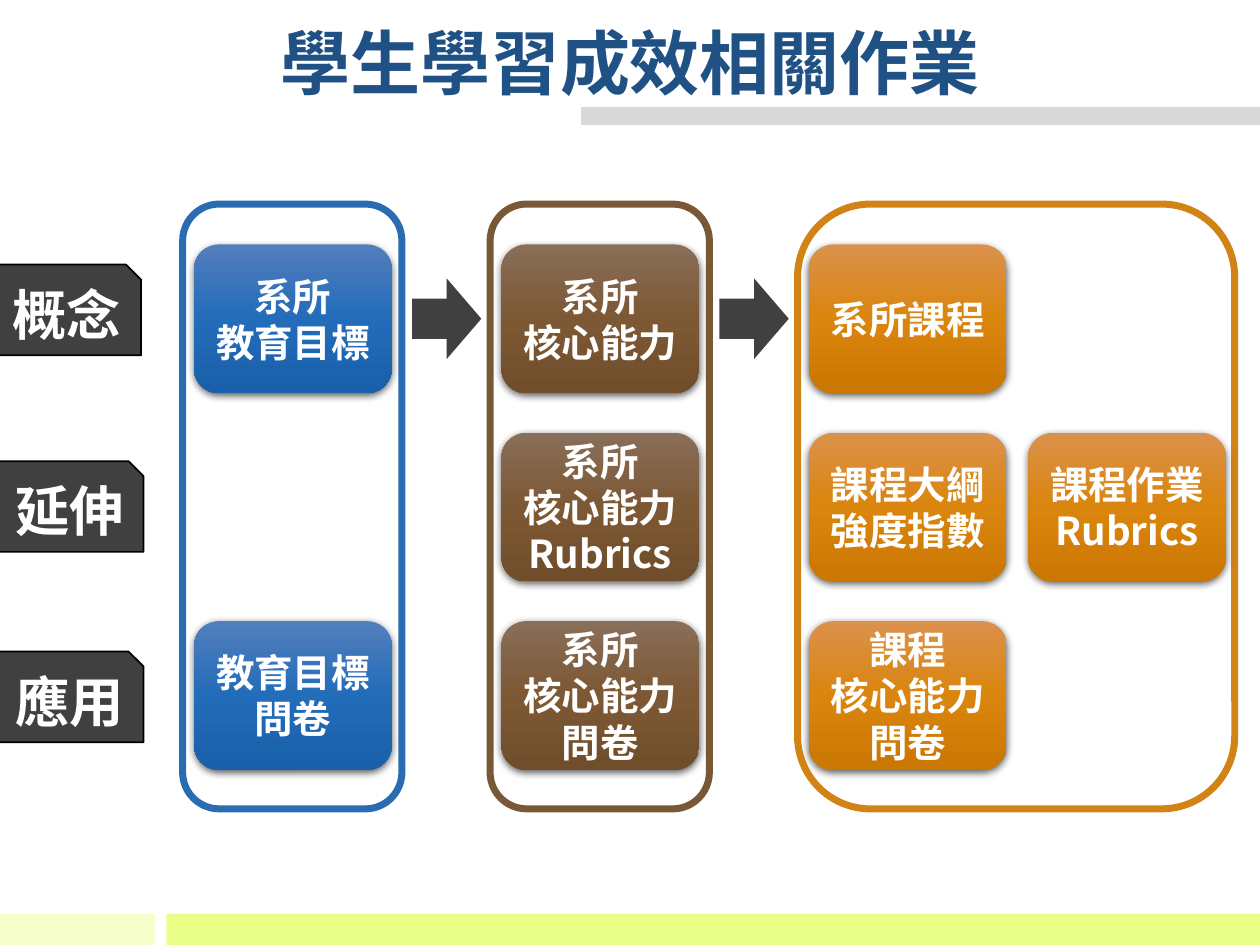
from collections import namedtuple

from lxml import etree
from pptx import Presentation
from pptx import util as u
from pptx.dml.color import RGBColor
from pptx.enum import shapes, text
from pptx.oxml import ns

FONT = "Noto Sans CJK SC"
WHITE = RGBColor(0xFF, 0xFF, 0xFF)
BLACK = RGBColor(0, 0, 0)
CHARCOAL = RGBColor(0x40, 0x40, 0x40)
NAVY = RGBColor(0x20, 0x51, 0x85)
SILVER = RGBColor(0xD9, 0xD9, 0xD9)
PALE_LIME = RGBColor(0xF6, 0xFF, 0xCC)
LIME = RGBColor(0xE9, 0xFF, 0x88)

Box = namedtuple("Box", "left top width height")
Theme = namedtuple("Theme", "frame top middle bottom")
BLUE = Theme(*map(RGBColor.from_string, ("2A6CB2", "527EBD", "236CB9", "1960AA")))
BROWN = Theme(*map(RGBColor.from_string, ("795837", "896E59", "7C5834", "714E2B")))
ORANGE = Theme(*map(RGBColor.from_string, ("D18316", "DB914C", "DA850D", "CA7703")))

PAGE = Box(0, 0, 10, 7.5)
GRID = Box(1.45, 1.62, 8.35, 4.8)
COLUMN_PITCH, ROW_PITCH = 2.44, 1.495
CARD_STEP = 1.74
CARD = Box(0.09, 0.32, 1.57, 1.18)
ARROW = Box(1.82, 0.59, 0.55, 0.64)

# theme, frame width, cards as (row, place in row, lines)
COLUMNS = [
    (BLUE, 1.74, [(0, 0, ["系所", "教育目標"]), (2, 0, ["教育目標問卷"])]),
    (BROWN, 1.74, [(0, 0, ["系所", "核心能力"]), (1, 0, ["系所", "核心能力Rubrics"]),
                   (2, 0, ["系所", "核心能力問卷"])]),
    (ORANGE, 3.47, [(0, 0, ["系所課程"]), (1, 0, ["課程大綱強度指數"]),
                    (1, 1, ["課程作業Rubrics"]), (2, 0, ["課程", "核心能力問卷"])]),
]
ROW_LABELS = [("概念", -0.51, 2.1), ("延伸", -0.49, 3.66), ("應用", -0.49, 5.17)]


def write(shape, lines, size, color, align):
    frame = shape.text_frame
    frame.word_wrap = True
    frame.auto_size = text.MSO_AUTO_SIZE.NONE
    frame.vertical_anchor = text.MSO_ANCHOR.MIDDLE
    frame.text = "\n".join(lines)
    for para in frame.paragraphs:
        para.alignment = align
        font = para.font
        font.size, font.bold, font.name = u.Pt(size), True, FONT
        font.color.rgb = color
        defaults = para._p.get_or_add_pPr().get_or_add_defRPr()
        etree.SubElement(defaults, ns.qn("a:ea"), typeface=FONT)


def add_shape(page, kind, box, fill=None, line=None, weight=1):
    shape = page.shapes.add_shape(kind, *map(u.Inches, box))
    shape.shadow.inherit = False
    if fill is None:
        shape.fill.background()
    else:
        shape.fill.solid()
        shape.fill.fore_color.rgb = fill
    if line is None:
        shape.line.fill.background()
    else:
        shape.line.color.rgb = line
        shape.line.width = u.Pt(weight)
    return shape


def shade(shape, theme):
    """Give a shape a three-stop vertical gradient and a soft shadow below."""
    shape.fill.gradient()
    shape.fill.gradient_angle = 270
    properties = shape._element.spPr
    stops = properties.find(".//" + ns.qn("a:gsLst"))
    stops.clear()
    for share, color in zip((0, 50, 100), theme[1:]):
        stop = etree.SubElement(stops, ns.qn("a:gs"), pos=str(share * 1000))
        etree.SubElement(stop, ns.qn("a:srgbClr"), val=str(color))
    effects = properties.find(ns.qn("a:effectLst"))
    shadow = etree.SubElement(effects, ns.qn("a:outerShdw"), blurRad=str(u.Pt(4.5)),
                              dist=str(u.Pt(1.5)), dir="5400000", algn="ctr", rotWithShape="0")
    black = etree.SubElement(shadow, ns.qn("a:srgbClr"), val=str(BLACK))
    etree.SubElement(black, ns.qn("a:alpha"), val="63000")


def add_header(page, box):
    title = page.shapes.title
    title.left, title.top, title.width, title.height = map(u.Inches, box)
    write(title, ["學生學習成效相關作業"], 40, NAVY, text.PP_ALIGN.CENTER)
    y = u.Inches(box.top + box.height + 0.08)
    rule = page.shapes.add_connector(shapes.MSO_CONNECTOR.STRAIGHT, u.Inches(4.61), y,
                                     u.Inches(box.left + box.width), y)
    rule.line.color.rgb = SILVER
    rule.line.width = u.Pt(10)
    etree.SubElement(rule._element.spPr, ns.qn("a:effectLst"))


def add_footer(page, box):
    rectangle = shapes.MSO_SHAPE.RECTANGLE
    split, gap = 1.23, 0.09
    add_shape(page, rectangle, box._replace(width=split), PALE_LIME)
    add_shape(page, rectangle, box._replace(left=box.left + split + gap,
                                           width=box.width - split - gap), LIME)


def add_column(page, box, theme, cards):
    rounded = shapes.MSO_SHAPE.ROUNDED_RECTANGLE
    add_shape(page, rounded, box, line=theme.frame, weight=4)
    for row, place, lines in cards:
        card = add_shape(page, rounded, CARD._replace(
            left=box.left + CARD.left + place * CARD_STEP,
            top=box.top + CARD.top + row * ROW_PITCH))
        shade(card, theme)
        write(card, lines, 22, WHITE, text.PP_ALIGN.CENTER)


def add_grid(page, box):
    for index, (theme, width, cards) in enumerate(COLUMNS):
        left = box.left + index * COLUMN_PITCH
        add_column(page, box._replace(left=left, width=width), theme, cards)
        if index < len(COLUMNS) - 1:
            arrow = ARROW._replace(left=left + ARROW.left, top=box.top + ARROW.top)
            add_shape(page, shapes.MSO_SHAPE.RIGHT_ARROW, arrow, CHARCOAL)


def add_row_labels(page):
    for label, left, top in ROW_LABELS:
        tag = add_shape(page, shapes.MSO_SHAPE.SNIP_1_RECTANGLE,
                        Box(left, top, 1.63, 0.72), CHARCOAL, BLACK)
        write(tag, [label], 31, WHITE, text.PP_ALIGN.RIGHT)


def main():
    deck = Presentation()
    deck.slide_width, deck.slide_height = u.Inches(PAGE.width), u.Inches(PAGE.height)
    page = deck.slides.add_slide(deck.slide_layouts[5])
    add_footer(page, Box(0, PAGE.height - 0.25, PAGE.width, 0.25))
    add_header(page, Box(0, 0.13, PAGE.width, 0.71))
    add_row_labels(page)
    add_grid(page, GRID)
    deck.save("out.pptx")


if __name__ == "__main__":
    main()
